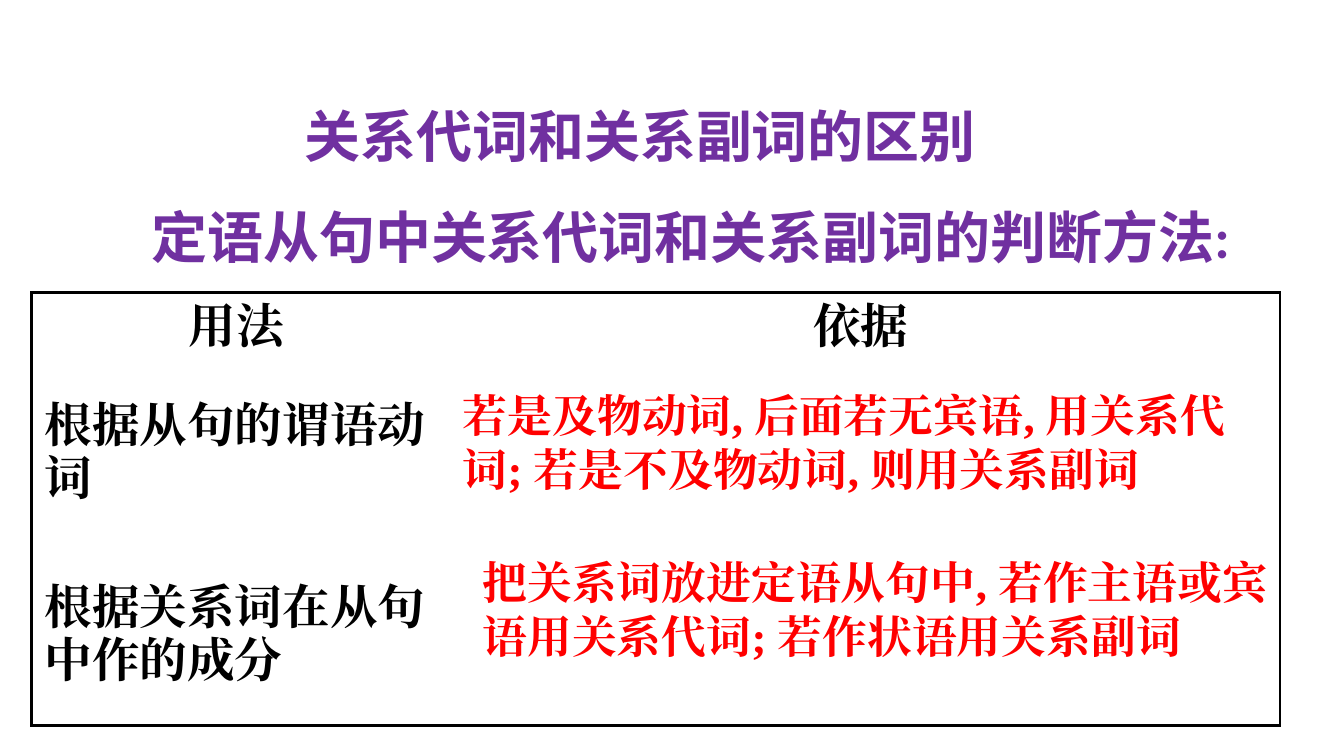
from dataclasses import dataclass
from lxml.etree import SubElement
from pptx import Presentation
from pptx.dml.color import RGBColor
from pptx.enum.text import MSO_ANCHOR, PP_ALIGN
from pptx.oxml.ns import qn
from pptx.util import Pt


@dataclass
class Theme:
    purple: str = "7030A0"
    red: str = "FF0000"
    black: str = "000000"
    title_size: int = 40
    cell_size: int = 34
    note_size: int = 32
    border: int = 2
    title_font: str = "Calibri"
    body_font: str = "Times New Roman"


theme = Theme()


def style(p, size, font, color):
    for r in p.runs:
        r.font.size, r.font.name, r.font.bold = Pt(size), font, True
        r.font.color.rgb = RGBColor.from_string(color)
        SubElement(r.font._element, qn("a:ea"), typeface=font)


def set_borders(cell, visible):
    """Draw the named sides (L, R, T, B) and hide the others."""
    tcPr = cell._tc.get_or_add_tcPr()
    for i, side in enumerate("LRTB"):
        ln = SubElement(tcPr, qn(f"a:ln{side}"), w=str(Pt(theme.border)))
        if side in visible:
            fill = SubElement(ln, qn("a:solidFill"))
            SubElement(fill, qn("a:srgbClr"), val=theme.black)
        else:
            SubElement(ln, qn("a:noFill"))
        tcPr.insert(i, ln)


prs = Presentation()
prs.slide_width, prs.slide_height = Pt(960), Pt(540)
s = prs.slides.add_slide(prs.slide_layouts[6])

# Heading
sp = s.shapes.add_textbox(Pt(3), Pt(44), Pt(908.5), Pt(155))
tf = sp.text_frame
tf.word_wrap = True
tf.margin_left = tf.margin_right = Pt(9.5)
tf.margin_top = tf.margin_bottom = Pt(4.5)
tf.text = "关系代词和关系副词的区别\n定语从句中关系代词和关系副词的判断方法:"
for p in tf.paragraphs:
    p.alignment, p.line_spacing = PP_ALIGN.CENTER, 1.5
    style(p, theme.title_size, theme.title_font, theme.purple)
tf.paragraphs[1]._p.get_or_add_pPr().set("marL", str(Pt(72)))

# Table with an outer frame only
rows = [("用法", "依据"), ("根据从句的谓语动词", ""), ("根据关系词在从句中作的成分", "")]
table = s.shapes.add_table(3, 2, Pt(22.5), Pt(209), Pt(892), Pt(308.5)).table
table.first_row = table.horz_banding = False
for column, width in zip(table.columns, (292.5, 599.5)):
    column.width = Pt(width)
for row, height in zip(table.rows, (49, 129.75, 129.75)):
    row.height = Pt(height)
for i, texts in enumerate(rows):
    for j, text in enumerate(texts):
        cell = table.cell(i, j)
        cell.fill.background()
        set_borders(cell, "LR"[j] + {0: "T", 2: "B"}.get(i, ""))
        cell.vertical_anchor = MSO_ANCHOR.MIDDLE
        cell.margin_left = cell.margin_right = Pt(9.5)
        cell.margin_top = cell.margin_bottom = Pt(4.5)
        cell.text = text
        p = cell.text_frame.paragraphs[0]
        p.alignment = PP_ALIGN.LEFT if i else PP_ALIGN.CENTER
        style(p, theme.cell_size, theme.body_font, theme.black)

# Criteria laid over the right column
notes = [
    (323.5, 273.5, "若是及物动词, 后面若无宾语, 用关系代词; 若是不及物动词, 则用关系副词"),
    (337.5, 393, "把关系词放进定语从句中, 若作主语或宾语用关系代词; 若作状语用关系副词"),
]
for left, top, text in notes:
    tf = s.shapes.add_textbox(Pt(left), Pt(top), Pt(588), Pt(85)).text_frame
    tf.word_wrap = True
    tf.text = text
    style(tf.paragraphs[0], theme.note_size, theme.body_font, theme.red)

prs.save("out.pptx")
